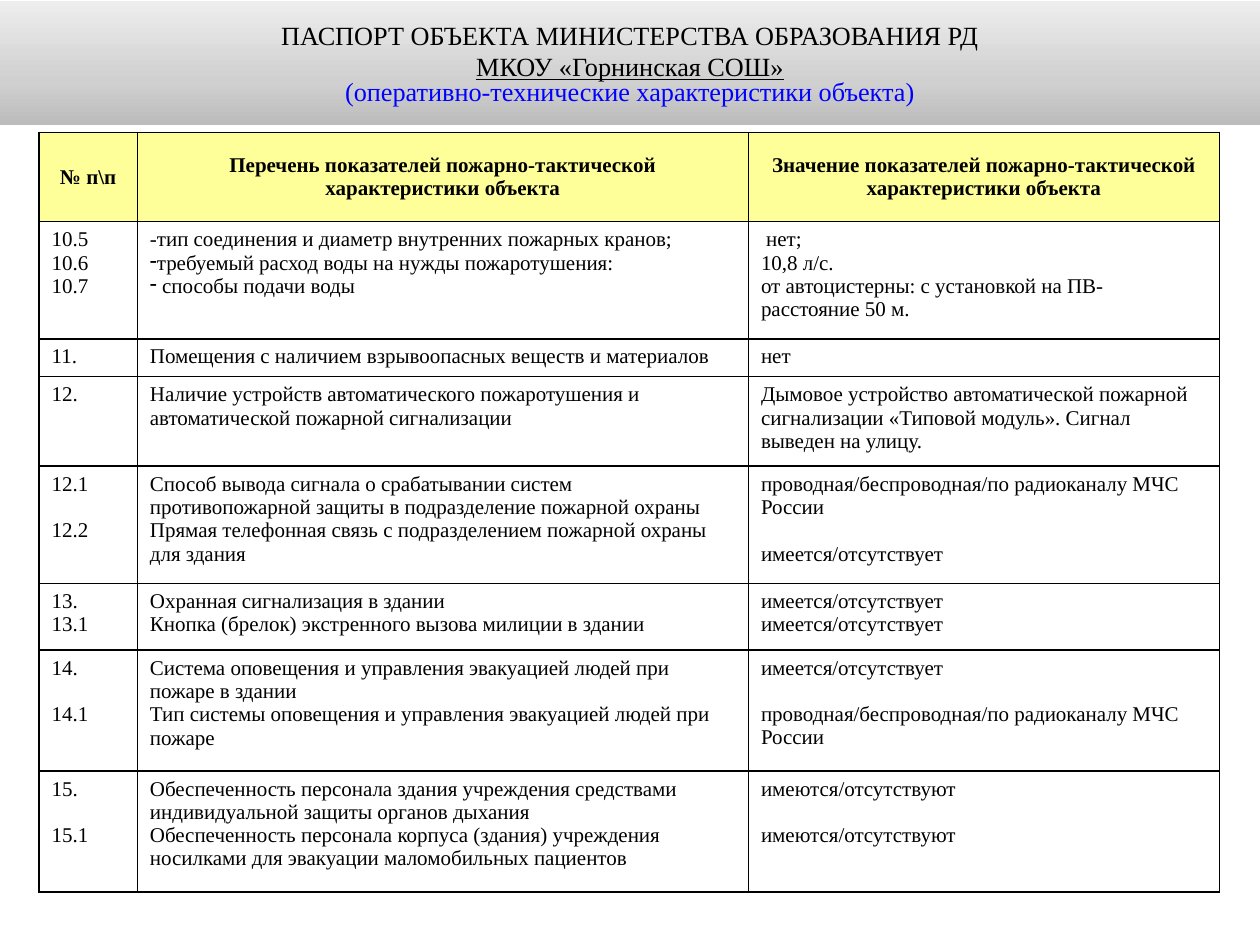
import copy
from typing import Any, NamedTuple

import lxml.etree
import pptx
import pptx.dml.color
import pptx.enum.dml
import pptx.enum.text
import pptx.oxml.ns
import pptx.util
from pptx.util import Inches

RGBColor = pptx.dml.color.RGBColor
BLACK = RGBColor(0x00, 0x00, 0x00)
WHITE = RGBColor(0xFF, 0xFF, 0xFF)
BLUE = RGBColor(0x00, 0x00, 0xFF)
YELLOW = RGBColor(0xFF, 0xFF, 0x99)
BANNER_STOPS = (
    (0.0, RGBColor(0xBC, 0xBC, 0xBC)),
    (0.35, RGBColor(0xD0, 0xD0, 0xD0)),
    (1.0, RGBColor(0xED, 0xED, 0xED)),
)
FONT = "Times New Roman"
TABLE_SIZE = 12
TITLE_SIZE = 15
LINE_GAP = pptx.util.Pt(13.3)  # one line of table text
COLUMN_WIDTHS = (0.78, 4.85, 3.74)
PRESENT = "имеется/отсутствует"
AVAILABLE = "имеются/отсутствуют"
CHANNEL = "проводная/беспроводная/по радиоканалу МЧС России"


class Line(NamedTuple):
    text: str
    gap_before: bool = False
    dash: bool = False


class Row(NamedTuple):
    height: float
    cells: tuple[tuple[Line, ...], ...]


def lines(*texts: str) -> tuple[Line, ...]:
    return tuple(Line(text) for text in texts)


def spaced(first: str, second: str) -> tuple[Line, ...]:
    """Two paragraphs one line apart."""
    return Line(first), Line(second, gap_before=True)


ROWS = (
    Row(0.71, (
        lines("№ п\\п"),
        lines("Перечень показателей пожарно-тактической характеристики объекта"),
        lines("Значение показателей пожарно-тактической характеристики объекта"),
    )),
    Row(0.93, (
        lines("10.5", "10.6", "10.7"),
        (
            Line("-тип соединения и диаметр внутренних пожарных кранов;"),
            Line("требуемый расход воды на нужды пожаротушения:", dash=True),
            Line(" способы подачи воды", dash=True),
        ),
        lines(" нет;", "10,8 л/с.", "от автоцистерны: с установкой на ПВ- расстояние 50 м."),
    )),
    Row(0.3, (
        lines("11."),
        lines("Помещения с наличием взрывоопасных веществ и материалов"),
        lines("нет"),
    )),
    Row(0.71, (
        lines("12."),
        lines("Наличие устройств автоматического пожаротушения и автоматической пожарной сигнализации"),
        lines("Дымовое устройство автоматической пожарной сигнализации «Типовой модуль». "
              "Сигнал выведен на улицу."),
    )),
    Row(0.93, (
        spaced("12.1", "12.2"),
        lines("Способ вывода сигнала о срабатывании систем противопожарной защиты "
              "в подразделение пожарной охраны",
              "Прямая телефонная связь с подразделением пожарной охраны для здания"),
        spaced(CHANNEL, PRESENT),
    )),
    Row(0.53, (
        lines("13.", "13.1"),
        lines("Охранная сигнализация в здании",
              "Кнопка (брелок) экстренного вызова милиции в здании"),
        lines(PRESENT, PRESENT),
    )),
    Row(0.96, (
        spaced("14.", "14.1"),
        lines("Система оповещения и управления эвакуацией людей при пожаре в здании",
              "Тип системы оповещения и управления эвакуацией людей при пожаре"),
        spaced(PRESENT, CHANNEL),
    )),
    Row(0.96, (
        spaced("15.", "15.1"),
        lines("Обеспеченность персонала здания учреждения средствами "
              "индивидуальной защиты органов дыхания",
              "Обеспеченность персонала корпуса (здания) учреждения носилками "
              "для эвакуации маломобильных пациентов"),
        spaced(AVAILABLE, AVAILABLE),
    )),
)


def add_element(parent: Any, tag: str, **attributes: str) -> Any:
    return lxml.etree.SubElement(parent, pptx.oxml.ns.qn(tag), **attributes)


def format_runs(paragraph: Any, size: float, color: RGBColor = BLACK, bold: bool = False) -> None:
    for run in paragraph.runs:
        run.font.name = FONT
        run.font.size = pptx.util.Pt(size)
        run.font.color.rgb = color
        run.font.bold = bold


def add_banner(slide: Any) -> None:
    banner = slide.shapes.title
    banner.left, banner.top = Inches(0), Inches(0.01)
    banner.width, banner.height = Inches(10), Inches(0.98)

    banner.fill.gradient()
    banner.fill.gradient_angle = 90
    stop_list = banner._element.spPr.find(".//" + pptx.oxml.ns.qn("a:gsLst"))
    stop_list.append(copy.deepcopy(stop_list[-1]))
    for stop, (position, color) in zip(banner.fill.gradient_stops, BANNER_STOPS):
        stop.position = position
        stop.color.rgb = color

    text_frame = banner.text_frame
    text_frame.text = (
        "ПАСПОРТ ОБЪЕКТА МИНИСТЕРСТВА ОБРАЗОВАНИЯ РД\n"
        "МКОУ «Горнинская СОШ»\n"
        "(оперативно-технические характеристики объекта)"
    )
    text_frame.auto_size = pptx.enum.text.MSO_AUTO_SIZE.NONE
    text_frame.word_wrap = True
    text_frame.vertical_anchor = pptx.enum.text.MSO_ANCHOR.MIDDLE
    text_frame.margin_left = text_frame.margin_right = Inches(0.09)
    text_frame.margin_top = text_frame.margin_bottom = Inches(0.05)
    for paragraph, color in zip(text_frame.paragraphs, (BLACK, BLACK, BLUE)):
        paragraph.alignment = pptx.enum.text.PP_ALIGN.CENTER
        format_runs(paragraph, TITLE_SIZE, color)
    text_frame.paragraphs[1].runs[0].font.underline = True
    text_frame.paragraphs[2].line_spacing = 0.8


def add_borders(cell: Any) -> None:
    properties = cell._tc.get_or_add_tcPr()
    for side in ("a:lnL", "a:lnR", "a:lnT", "a:lnB"):
        border = add_element(properties, side, w=str(pptx.util.Pt(1)))
        fill = add_element(border, "a:solidFill")
        add_element(fill, "a:srgbClr", val=str(BLACK))


def fill_cell(cell: Any, content: tuple[Line, ...], is_header: bool) -> None:
    add_borders(cell)
    cell.fill.solid()
    cell.fill.fore_color.rgb = YELLOW if is_header else WHITE
    cell.margin_left = cell.margin_right = Inches(0.1)
    cell.margin_top = cell.margin_bottom = Inches(0.05)
    anchors = pptx.enum.text.MSO_ANCHOR
    cell.vertical_anchor = anchors.MIDDLE if is_header else anchors.TOP
    cell.text_frame.text = "\n".join(line.text for line in content)
    for paragraph, line in zip(cell.text_frame.paragraphs, content):
        format_runs(paragraph, TABLE_SIZE, bold=is_header)
        if is_header:
            paragraph.alignment = pptx.enum.text.PP_ALIGN.CENTER
        if line.gap_before:
            paragraph.space_before = LINE_GAP
        if line.dash:
            add_element(paragraph._p.get_or_add_pPr(), "a:buChar", char="-")


def add_indicator_table(slide: Any) -> None:
    table = slide.shapes.add_table(
        len(ROWS), len(COLUMN_WIDTHS), Inches(0.31), Inches(1.05),
        Inches(sum(COLUMN_WIDTHS)), Inches(sum(row.height for row in ROWS)),
    ).table
    for column, width in zip(table.columns, COLUMN_WIDTHS):
        column.width = Inches(width)
    for row_index, row in enumerate(ROWS):
        table.rows[row_index].height = Inches(row.height)
        for column_index, content in enumerate(row.cells):
            fill_cell(table.cell(row_index, column_index), content, row_index == 0)


def main() -> None:
    presentation = pptx.Presentation()
    presentation.slide_width, presentation.slide_height = Inches(10), Inches(7.5)
    slide = presentation.slides.add_slide(presentation.slide_layouts[5])
    add_indicator_table(slide)
    add_banner(slide)
    presentation.save("out.pptx")


if __name__ == "__main__":
    main()
